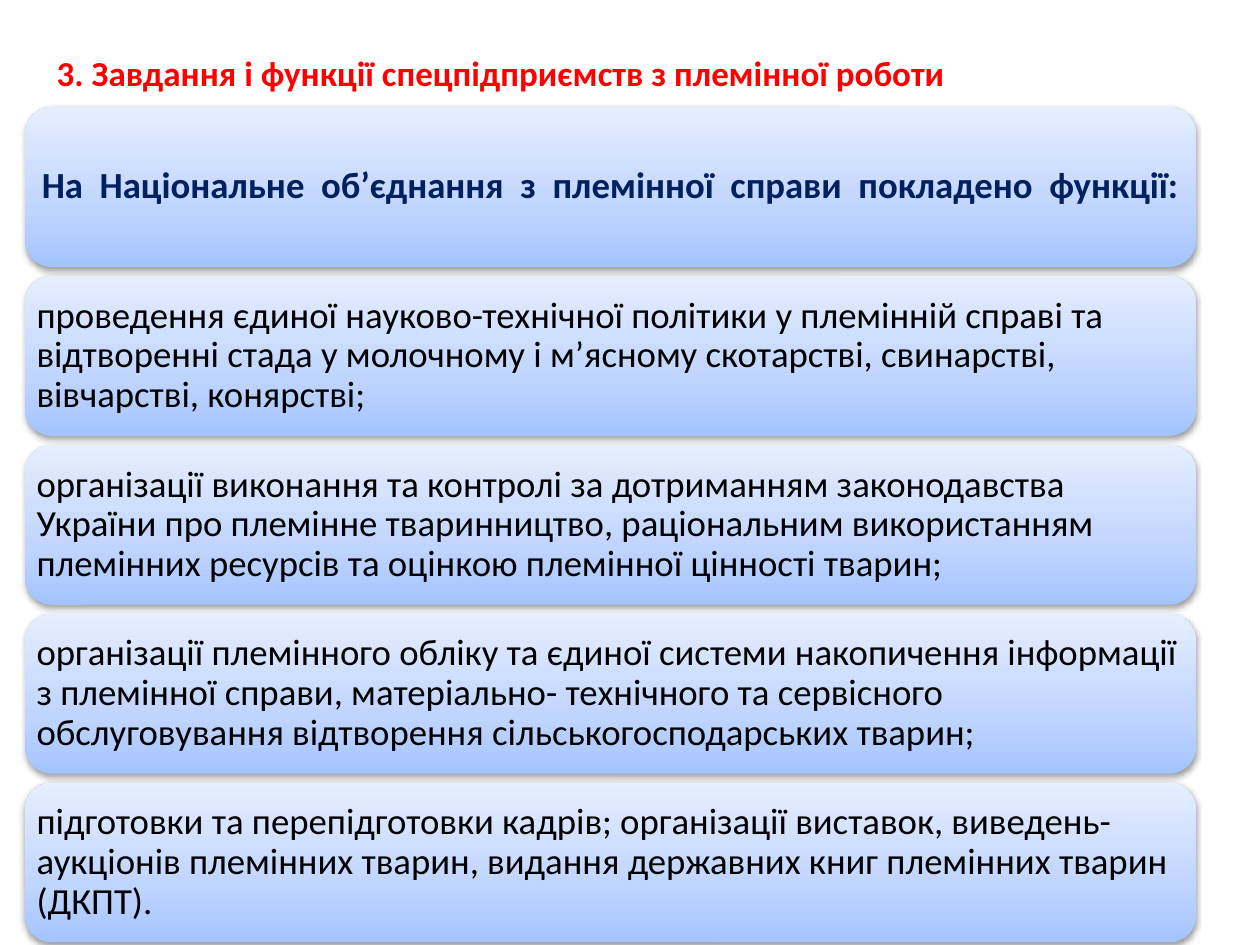
from lxml import etree
from pptx import Presentation
from pptx.dml.color import RGBColor
from pptx.enum.shapes import MSO_SHAPE
from pptx.enum.text import MSO_ANCHOR, PP_ALIGN
from pptx.oxml.ns import qn
from pptx.util import Pt

ROUNDED = MSO_SHAPE.ROUNDED_RECTANGLE
TOP, MIDDLE = MSO_ANCHOR.TOP, MSO_ANCHOR.MIDDLE
LEFT, CENTER = PP_ALIGN.LEFT, PP_ALIGN.CENTER

TITLE = "3. Завдання і функції спецпідприємств з племінної роботи"
HEADING = "На  Національне  об’єднання  з  племінної  справи  покладено  функції:"
FUNCTIONS = [
    "проведення єдиної науково-технічної політики у племінній справі та відтворенні стада "
    "у молочному і м’ясному скотарстві, свинарстві, вівчарстві, конярстві;",
    "організації виконання та контролі за дотриманням законодавства України про племінне "
    "тваринництво, раціональним використанням племінних ресурсів та оцінкою племінної "
    "цінності тварин;",
    "організації племінного обліку та єдиної системи накопичення інформації з племінної "
    "справи, матеріально- технічного та сервісного обслуговування відтворення "
    "сільськогосподарських тварин;",
    "підготовки та перепідготовки кадрів; організації виставок, виведень- аукціонів "
    "племінних тварин, видання державних книг племінних тварин (ДКПТ).",
]

GRADIENT = [(0, "A4C4FF"), (35, "BFD4FF"), (100, "E6EEFF")]
TITLE_FONT = {"name": "Calibri", "size": Pt(20), "bold": True}
HEADING_FONT = {"name": "Calibri", "size": Pt(21), "bold": True}
FUNCTION_FONT = {"name": "Calibri", "size": Pt(21), "bold": False}
TITLE_FRAME = {"word_wrap": True, "vertical_anchor": TOP, "margin_left": Pt(7.2),
               "margin_right": Pt(7.2), "margin_top": Pt(3.6), "margin_bottom": Pt(3.6)}
PANEL_FRAME = {"word_wrap": True, "vertical_anchor": MIDDLE, "margin_left": Pt(2),
               "margin_right": Pt(2), "margin_top": Pt(2), "margin_bottom": Pt(2)}

PANEL_LEFT, PANEL_TOP, PANEL_WIDTH, PANEL_HEIGHT = 14.4, 61.2, 668.9, 91.4
PANEL_STEP = 96.5


def apply(target, values):
    """Set each attribute of the target from a dict."""
    for name, value in values.items():
        setattr(target, name, value)


def color(hex_code):
    """Return the colour for a hex string."""
    return RGBColor.from_string(hex_code)


def write(shape, text, frame_format, font_format, hex_code, paragraph_format):
    """Put one formatted paragraph into a shape."""
    frame = shape.text_frame
    frame.text = text
    apply(frame, frame_format)
    paragraph = frame.paragraphs[0]
    apply(paragraph, paragraph_format)
    font = paragraph.runs[0].font
    apply(font, font_format)
    font.color.rgb = color(hex_code)


def add_color(parent, hex_code):
    """Append an RGB colour element and return it."""
    return etree.SubElement(parent, qn("a:srgbClr"), val=hex_code)


def add_panel(slide, top):
    """Add one rounded panel with its gradient and soft shadow."""
    panel = slide.shapes.add_shape(
        ROUNDED, Pt(PANEL_LEFT), Pt(top), Pt(PANEL_WIDTH), Pt(PANEL_HEIGHT))
    panel.line.fill.background()
    panel.fill.gradient()
    panel.fill.gradient_angle = 90
    properties = panel.element.spPr
    stops = properties.find(qn("a:gradFill")).find(qn("a:gsLst"))
    for stop in list(stops):
        stops.remove(stop)
    for position, hex_code in GRADIENT:
        stop = etree.SubElement(stops, qn("a:gs"), pos=str(position * 1000))
        add_color(stop, hex_code)
    panel.shadow.inherit = False
    shadow = etree.SubElement(
        properties.find(qn("a:effectLst")), qn("a:outerShdw"),
        blurRad=str(Pt(3.1)), dist=str(Pt(1.6)), dir="5400000", rotWithShape="0")
    etree.SubElement(add_color(shadow, "000000"), qn("a:alpha"), val="38000")
    return panel


def main():
    """Build and save the slide."""
    deck = Presentation()
    apply(deck, {"slide_width": Pt(720), "slide_height": Pt(540)})
    slide = deck.slides.add_slide(deck.slide_layouts[5])
    title = slide.shapes.title
    apply(title, {"left": Pt(25.2), "top": Pt(25.9), "width": Pt(663.1), "height": Pt(31.7)})
    write(title, TITLE, TITLE_FRAME, TITLE_FONT, "FF0000", {"alignment": LEFT})

    panels = [(HEADING, HEADING_FONT, "002060", CENTER)]
    panels += [(text, FUNCTION_FONT, "000000", LEFT) for text in FUNCTIONS]
    for row, (text, font_format, hex_code, alignment) in enumerate(panels):
        panel = add_panel(slide, PANEL_TOP + row * PANEL_STEP)
        write(panel, text, PANEL_FRAME, font_format, hex_code,
              {"alignment": alignment, "line_spacing": 0.9})
    deck.save("out.pptx")


if __name__ == "__main__":
    main()
